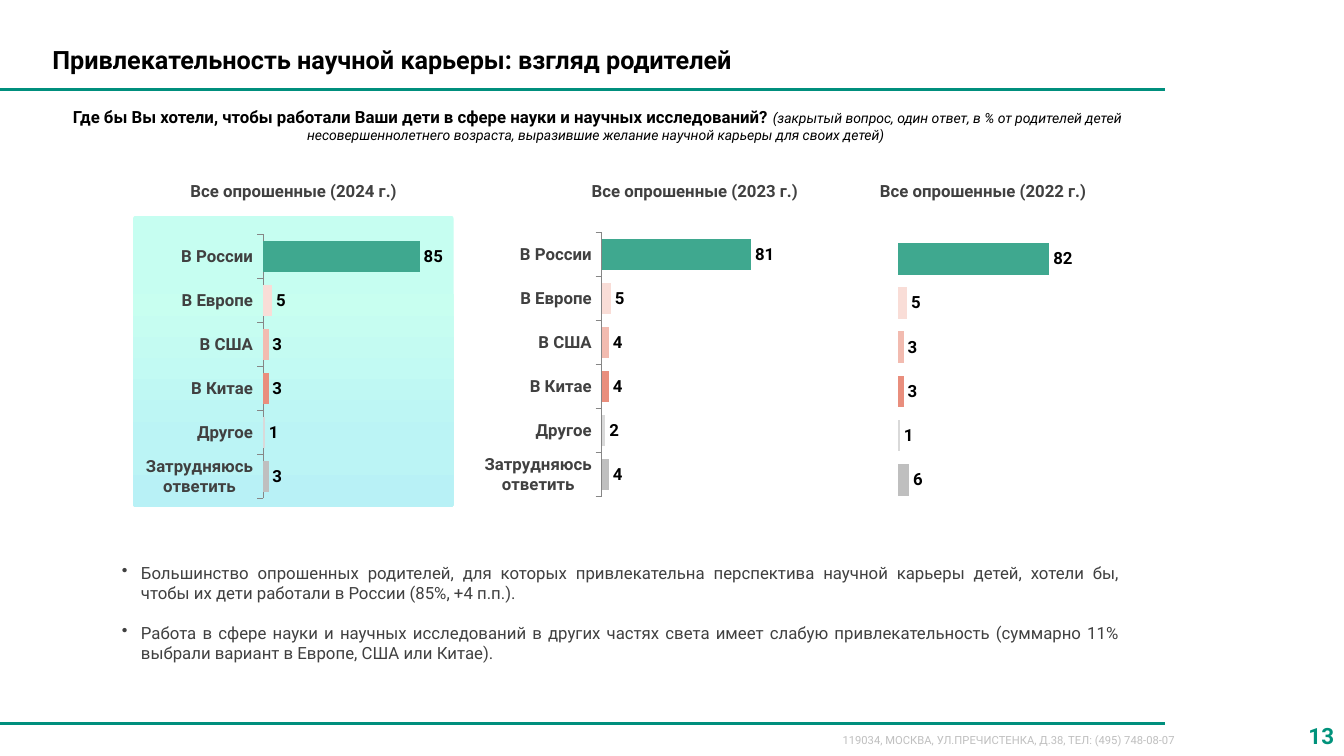
import copy
from dataclasses import dataclass

import lxml.etree
import pptx
import pptx.chart.data
import pptx.dml.color
import pptx.enum.chart
import pptx.enum.shapes
import pptx.enum.text
import pptx.oxml.ns
import pptx.util

Pt = pptx.util.Pt
Align = pptx.enum.text.PP_ALIGN
Anchor = pptx.enum.text.MSO_ANCHOR
qn = pptx.oxml.ns.qn


def rgb(code):
    return pptx.dml.color.RGBColor.from_string(code)


@dataclass(frozen=True)
class Theme:
    font: str = "Roboto"
    ink: str = "000000"
    body: str = "404040"
    pale: str = "BFBFBF"
    axis: str = "868686"
    rule: str = "008F7D"
    page: str = "00927B"
    base: str = "009A70"
    bars: tuple = ("3FA88F", "F9DDD7", "F2BBB0", "E98E7D", "D9D9D9", "BFBFBF")
    glow: tuple = ((0, "C6FEF1"), (27, "C8FFF0"), (78, "BBF4F5"), (100, "B8F1F6"))
    head: int = 18
    num: int = 16
    text: int = 12
    note: int = 10
    foot: int = 8


class Board:
    """Draws on one slide; every length is a percentage of its size."""

    def __init__(self, deck, theme):
        self.theme = theme
        self.wide, self.high = deck.slide_width, deck.slide_height
        self.slide = deck.slides.add_slide(deck.slide_layouts[6])
        self.shapes = self.slide.shapes

    def place(self, x, y, w, h):
        return (round(x * self.wide / 100), round(y * self.high / 100),
                round(w * self.wide / 100), round(h * self.high / 100))

    def style(self, font, size, color, bold=False, slant=False):
        font.name = self.theme.font
        font.size = Pt(size)
        font.color.rgb = rgb(color)
        font.bold, font.italic = bold, slant

    def label(self, box, lines, size, color, bold=False, align=Align.LEFT,
              anchor=Anchor.TOP):
        frame = self.shapes.add_textbox(*self.place(*box)).text_frame
        frame.word_wrap = True
        frame.vertical_anchor = anchor
        frame.text = "\n".join(lines)
        for para in frame.paragraphs:
            para.alignment = align
            for run in para.runs:
                self.style(run.font, size, color, bold)
        return frame

    def items(self, box, lines, gap):
        frame = self.label(box, lines, self.theme.text, self.theme.body,
                           align=Align.JUSTIFY)
        dent = pptx.util.Inches(0.19)
        for i, para in enumerate(frame.paragraphs):
            if i:
                para.space_before = Pt(gap)
            props = para._p.get_or_add_pPr()
            props.set("marL", str(dent))
            props.set("indent", str(-dent))
            lxml.etree.SubElement(props, qn("a:buChar")).set("char", "•")

    def rule(self, y, w):
        x, top, right, _ = self.place(0, y, w, 0)
        kind = pptx.enum.shapes.MSO_CONNECTOR.STRAIGHT
        line = self.shapes.add_connector(kind, x, top, right, top)
        line.line.color.rgb = rgb(self.theme.rule)
        line.line.width = Pt(2)
        lxml.etree.SubElement(line._element.spPr, qn("a:effectLst"))

    def panel(self, box):
        kind = pptx.enum.shapes.MSO_SHAPE.ROUNDED_RECTANGLE
        shape = self.shapes.add_shape(kind, *self.place(*box))
        shape.adjustments[0] = 0.01
        shape.shadow.inherit = False
        shape.line.fill.background()
        shape.fill.gradient()
        shape.fill.gradient_angle = 270
        # Match the number of stops to the theme
        stops = shape._element.spPr.find(qn("a:gradFill")).find(qn("a:gsLst"))
        while len(stops) < len(self.theme.glow):
            stops.append(copy.deepcopy(stops[-1]))
        for stop, (spot, color) in zip(shape.fill.gradient_stops, self.theme.glow):
            stop.position = spot / 100
            stop.color.rgb = rgb(color)

    def chart(self, box, names, vals, named=True):
        enum, theme = pptx.enum.chart, self.theme
        data = pptx.chart.data.CategoryChartData(number_format="#,##0")
        data.categories = names
        data.add_series("Series 1", vals)
        chart = self.shapes.add_chart(enum.XL_CHART_TYPE.BAR_CLUSTERED,
                                      *self.place(*box), data).chart
        chart.has_title = chart.has_legend = False
        self.style(chart.font, theme.head, theme.ink)

        # Axes
        cat, val = chart.category_axis, chart.value_axis
        cat.reverse_order = True
        cat.visible = named
        cat.major_tick_mark = enum.XL_TICK_MARK.OUTSIDE
        cat.format.line.color.rgb = rgb(theme.axis)
        cat.format.line.width = Pt(0.75)
        self.style(cat.tick_labels.font, theme.text, theme.body, True)
        val.minimum_scale, val.maximum_scale = 0, 100
        val.has_major_gridlines = False
        val.visible = False

        # Bars and their values
        plot = chart.plots[0]
        plot.gap_width = 40
        plot.vary_by_categories = False
        row = plot.series[0]
        row.format.fill.solid()
        row.format.fill.fore_color.rgb = rgb(theme.base)
        for i, color in enumerate(theme.bars):
            fill = row.points[i].format.fill
            fill.solid()
            fill.fore_color.rgb = rgb(color)
        tags = row.data_labels
        tags.show_value = True
        tags.number_format = "#,##0"
        tags.number_format_is_linked = False
        tags.position = enum.XL_LABEL_POSITION.OUTSIDE_END
        self.style(tags.font, theme.text, theme.ink, True)

        # Fixed plot area, so bars line up whatever the labels
        area = chart._chartSpace.chart.plotArea
        for old in area.findall(qn("c:layout")):
            area.remove(old)
        lay = lxml.etree.Element(qn("c:layout"))
        area.insert(0, lay)
        hand = lxml.etree.SubElement(lay, qn("c:manualLayout"))
        for tag, mark in (("layoutTarget", "inner"), ("xMode", "edge"),
                          ("yMode", "edge"), ("x", 0.48), ("y", 0),
                          ("w", 0.52), ("h", 1)):
            lxml.etree.SubElement(hand, qn("c:" + tag)).set("val", str(mark))


def main():
    deck = pptx.Presentation()
    deck.slide_width = pptx.util.Inches(13.33)
    deck.slide_height = pptx.util.Inches(7.5)
    theme = Theme()
    board = Board(deck, theme)

    # Frame: rules, address, page number
    for y in (95.73, 11.87):
        board.rule(y, 86.7)
    board.label((61.95, 96.4, 28.8, 3.2),
                ["119034, МОСКВА, УЛ.ПРЕЧИСТЕНКА, Д.38, ТЕЛ: (495) 748-08-07"],
                theme.foot, theme.pale)
    board.label((94.88, 94.67, 5.12, 5.33), ["13"], theme.num, theme.page, True,
                Align.RIGHT, Anchor.MIDDLE)

    # Title and question
    board.label((3.15, 5.2, 85.13, 5.33),
                ["Привлекательность научной карьеры: взгляд родителей"],
                theme.head, theme.ink, True, Align.JUSTIFY, Anchor.MIDDLE)
    ask = board.label((1.8, 13.47, 85.28, 6.27),
                      ["Где бы Вы хотели, чтобы работали Ваши дети в сфере науки "
                       "и научных исследований? "],
                      theme.text, theme.ink, True, Align.CENTER)
    note = ask.paragraphs[0].add_run()
    note.text = ("(закрытый вопрос, один ответ, в % от родителей детей "
                 "несовершеннолетнего возраста, выразившие желание научной "
                 "карьеры для своих детей) ")
    board.style(note.font, theme.note, theme.ink, slant=True)

    # One chart per year: caption left, chart left and top, values
    board.panel((9.9, 28.53, 23.85, 38.53))
    names = ["В России", "В Европе", "В США", "В Китае", "Другое",
             "Затрудняюсь ответить"]
    ranks = [str(i + 1) for i in range(len(names))]
    years = ((2024, 13.43, 6.9, 30.93, (85, 5, 3, 3, 1, 3), names),
             (2023, 43.28, 32.1, 30.67, (81, 5, 4, 4, 2, 4), names),
             (2022, 64.73, 54.15, 31.33, (82, 5, 3, 3, 1, 6), ranks))
    for year, left, x, y, vals, cats in years:
        board.label((left, 23.2, 17.4, 4), [f"Все опрошенные ({year} г.)"],
                    theme.text, theme.body, True)
        board.chart((x, y, 26.4, 35.07), cats, vals, cats is names)

    # Findings
    board.items((8.33, 73.73, 75.75, 17.47),
                ["Большинство опрошенных родителей, для которых привлекательна "
                 "перспектива научной карьеры детей, хотели бы, чтобы их дети "
                 "работали в России (85%, +4 п.п.). ",
                 "Работа в сфере науки и научных исследований в других частях "
                 "света имеет слабую привлекательность (суммарно 11% выбрали "
                 "вариант в Европе, США или Китае). "], gap=14)

    deck.save("out.pptx")


if __name__ == "__main__":
    main()
